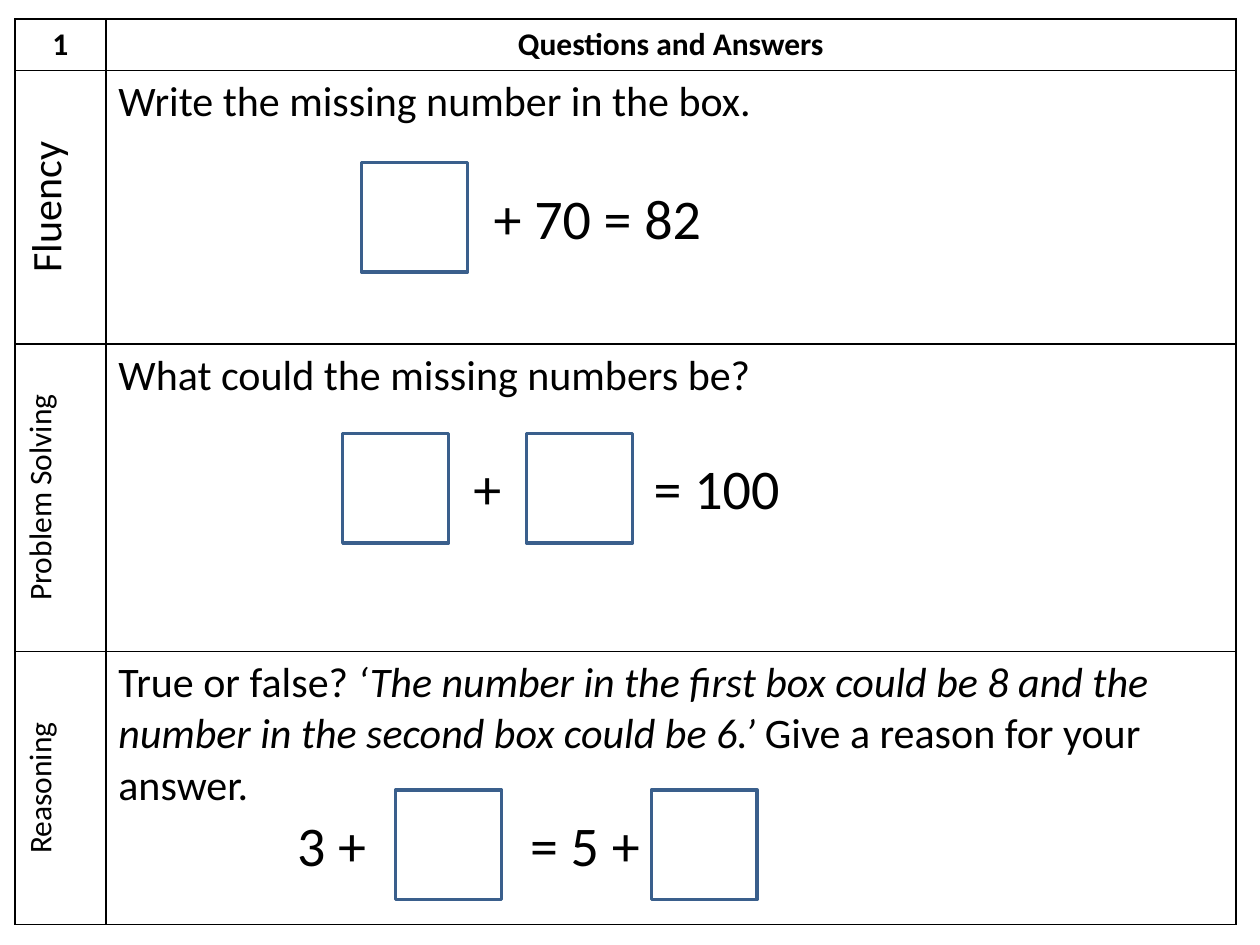
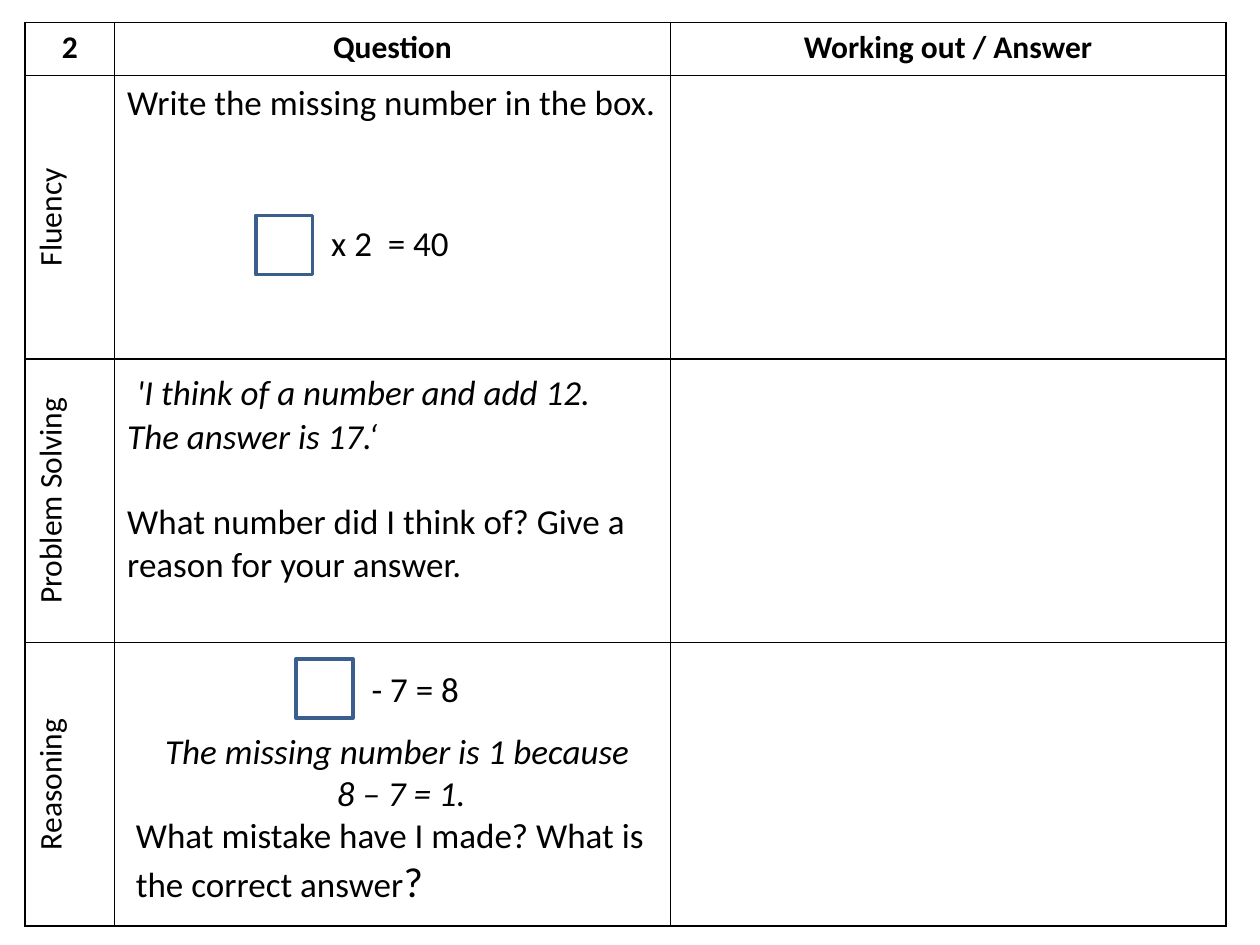
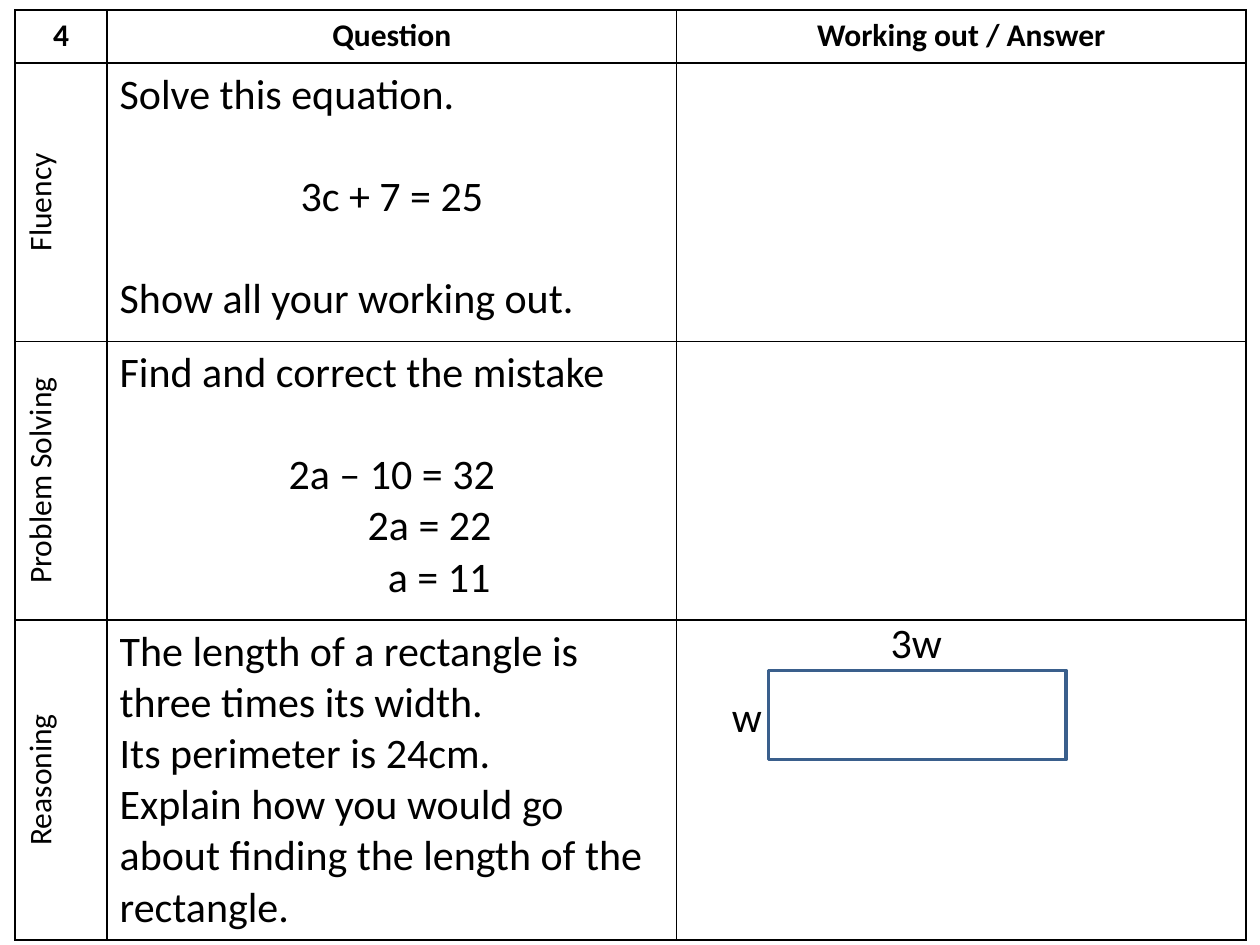
import pptx
import pptx.util
import pptx.dml.color
import pptx.enum.shapes
import pptx.enum.text
import lxml.etree
from pptx.util import Inches

COLOURS = {"ink": "000000", "outline": "3A5F8C"}
FONT = "Calibri"
LABELS = ["Fluency", "Problem Solving", "Reasoning"]
QUESTION_HEADINGS = ["Question", "Working out / Answer"]
DRAWING_NS = "http://schemas.openxmlformats.org/drawingml/2006/main"
CENTRE = pptx.enum.text.PP_ALIGN.CENTER
LEFT = pptx.enum.text.PP_ALIGN.LEFT


def para(*runs, align=LEFT, gap=0, indent=0):
    """Each run is (text, size) or (text, size, style), where style is "b" or "i"."""
    return {"runs": runs, "align": align, "gap": gap, "indent": indent}


def write_text(frame, paragraphs):
    for index, content in enumerate(paragraphs):
        paragraph = frame.add_paragraph() if index else frame.paragraphs[0]
        paragraph.alignment = content["align"]
        if content["gap"]:
            paragraph.space_before = pptx.util.Pt(content["gap"])
        if content["indent"]:
            paragraph._p.get_or_add_pPr().set("marL", str(Inches(content["indent"])))
        for words, size, *style in content["runs"]:
            run = paragraph.add_run()
            run.text = words
            run.font.name = FONT
            run.font.size = pptx.util.Pt(size)
            run.font.bold = "b" in style
            run.font.italic = "i" in style
            run.font.color.rgb = pptx.dml.color.RGBColor.from_string(COLOURS["ink"])


# Worksheets: questions go in the table, answer boxes and sums lie on top of it
large_box = (0.84, 0.87)
small_box = (0.45, 0.47)
worksheets = [
    {
        "number": "1", "headings": ["Questions and Answers"], "label_sizes": [24, 18, 18],
        "corner": (0.12, 0.15), "columns": [0.72, 8.97], "rows": [0.41, 2.17, 2.44, 2.17],
        "questions": [
            [para(("Write the missing number in the box.", 24))],
            [para(("What could the missing numbers be?", 24))],
            [para(("True or false? ", 24),
                  ("‘The number in the first box could be 8 and the number in the "
                   "second box could be 6.’ ", 24, "i"),
                  ("Give a reason for your answer.", 24))],
        ],
        "answer_boxes": [(x, y, *large_box) for x, y in
                         [(2.87, 1.29), (2.72, 3.44), (4.18, 3.44), (3.14, 6.27), (5.17, 6.27)]],
        "overlays": [(x, y, width, 0.64, [para((words, 32))]) for x, y, width, words in
                     [(3.82, 1.41, 2.99, "+ 70 = 82"),
                      (3.66, 3.55, 0.5, "+"), (5.09, 3.55, 1.5, "= 100"),
                      (2.26, 6.38, 0.85, "3 +"), (4.11, 6.38, 1.2, "= 5 +")]],
    },
    {
        "number": "2", "headings": QUESTION_HEADINGS, "label_sizes": [18, 18, 18],
        "corner": (0.2, 0.18), "columns": [0.71, 4.41, 4.41], "rows": [0.42, 2.25, 2.25, 2.25],
        "questions": [
            [para(("Write the missing number in the box.", 20))],
            [para((" ", 24, "i"),
                  ("'I think of a number and add 12.  The answer is 17.‘", 20, "i")),
             para(("What number did I think of? Give a reason for your answer.", 20), gap=24)],
            [],
        ],
        "answer_boxes": [(x, y, *small_box) for x, y in [(2.03, 1.71), (2.35, 5.23)]],
        "overlays": [
            (2.53, 1.71, 1.28, 0.44, [para(("x 2  = 40", 20))]),
            (2.85, 5.25, 1.28, 0.44, [para(("- 7 = 8", 20))]),
            (0.98, 5.74, 4.41, 1.51, [
                para(("The missing number is 1 because ", 20, "i"), align=CENTRE),
                para(("8 – 7 = 1.", 20, "i"), align=CENTRE),
                para(("What mistake have I made? What is the correct answer", 20), ("?", 24)),
            ]),
        ],
    },
    {
        "number": "4", "headings": QUESTION_HEADINGS, "label_sizes": [18, 18, 18],
        "corner": (0.12, 0.08), "columns": [0.73, 4.52, 4.52], "rows": [0.42, 2.21, 2.21, 2.54],
        "questions": [
            [para(("Solve this equation.", 24)),
             para(("3c + 7 = 25", 24), align=CENTRE, gap=29),
             para(("Show all your working out.", 24), gap=29)],
            [para(("Find and correct the mistake", 24)),
             para(("2a – 10 = 32", 24), align=CENTRE, gap=29),
             para(("2a = 22", 24), align=CENTRE, indent=0.6),
             para(("a = 11", 24), align=CENTRE, indent=0.75)],
            [para(("The length of a rectangle is three times its width.", 24)),
             para(("Its perimeter is 24cm.", 24)),
             para(("Explain how you would go about finding the length of the rectangle.", 24))],
        ],
        "answer_boxes": [(6.1, 5.32, 2.36, 0.71)],
        "overlays": [(5.71, 5.43, 1.26, 0.5, [para(("w", 24))]),
                     (6.97, 4.84, 1.26, 0.5, [para(("3w", 24))])],
    },
]

deck = pptx.Presentation()
deck.slide_width, deck.slide_height = Inches(10), Inches(7.5)

for sheet in worksheets:
    slide = deck.slides.add_slide(deck.slide_layouts[6])
    columns, rows = sheet["columns"], sheet["rows"]

    # Question grid
    left, top = sheet["corner"]
    grid = slide.shapes.add_table(len(rows), len(columns), Inches(left), Inches(top),
                                  Inches(sum(columns)), Inches(sum(rows))).table
    grid.first_row = grid.horz_banding = False
    for column, width in zip(grid.columns, columns):
        column.width = Inches(width)
    for row, height in zip(grid.rows, rows):
        row.height = Inches(height)
    for cell in grid.iter_cells():
        properties = cell._tc.get_or_add_tcPr()
        for side in ("lnL", "lnR", "lnT", "lnB"):
            border = lxml.etree.SubElement(properties, f"{{{DRAWING_NS}}}{side}",
                                           w=str(pptx.util.Pt(1)))
            fill = lxml.etree.SubElement(border, f"{{{DRAWING_NS}}}solidFill")
            lxml.etree.SubElement(fill, f"{{{DRAWING_NS}}}srgbClr", val=COLOURS["ink"])
        cell.fill.background()

    # Headings, sideways labels and questions
    for index, heading in enumerate([sheet["number"], *sheet["headings"]]):
        write_text(grid.cell(0, index).text_frame, [para((heading, 18, "b"), align=CENTRE)])
    entries = zip(LABELS, sheet["label_sizes"], sheet["questions"])
    for index, (label, size, question) in enumerate(entries, start=1):
        label_cell = grid.cell(index, 0)
        label_cell.vertical_anchor = pptx.enum.text.MSO_ANCHOR.MIDDLE
        label_cell._tc.get_or_add_tcPr().set("vert", "vert270")
        write_text(label_cell.text_frame, [para((label, size), align=CENTRE)])
        write_text(grid.cell(index, 1).text_frame, question)

    # Outlined boxes
    for bounds in sheet["answer_boxes"]:
        answer_box = slide.shapes.add_shape(pptx.enum.shapes.MSO_SHAPE.RECTANGLE,
                                            *map(Inches, bounds))
        answer_box.shadow.inherit = False
        answer_box.fill.background()
        answer_box.line.color.rgb = pptx.dml.color.RGBColor.from_string(COLOURS["outline"])
        answer_box.line.width = pptx.util.Pt(2)

    # Sums and captions
    for *bounds, paragraphs in sheet["overlays"]:
        caption = slide.shapes.add_textbox(*map(Inches, bounds)).text_frame
        caption.word_wrap = True
        write_text(caption, paragraphs)

deck.save("out.pptx")
